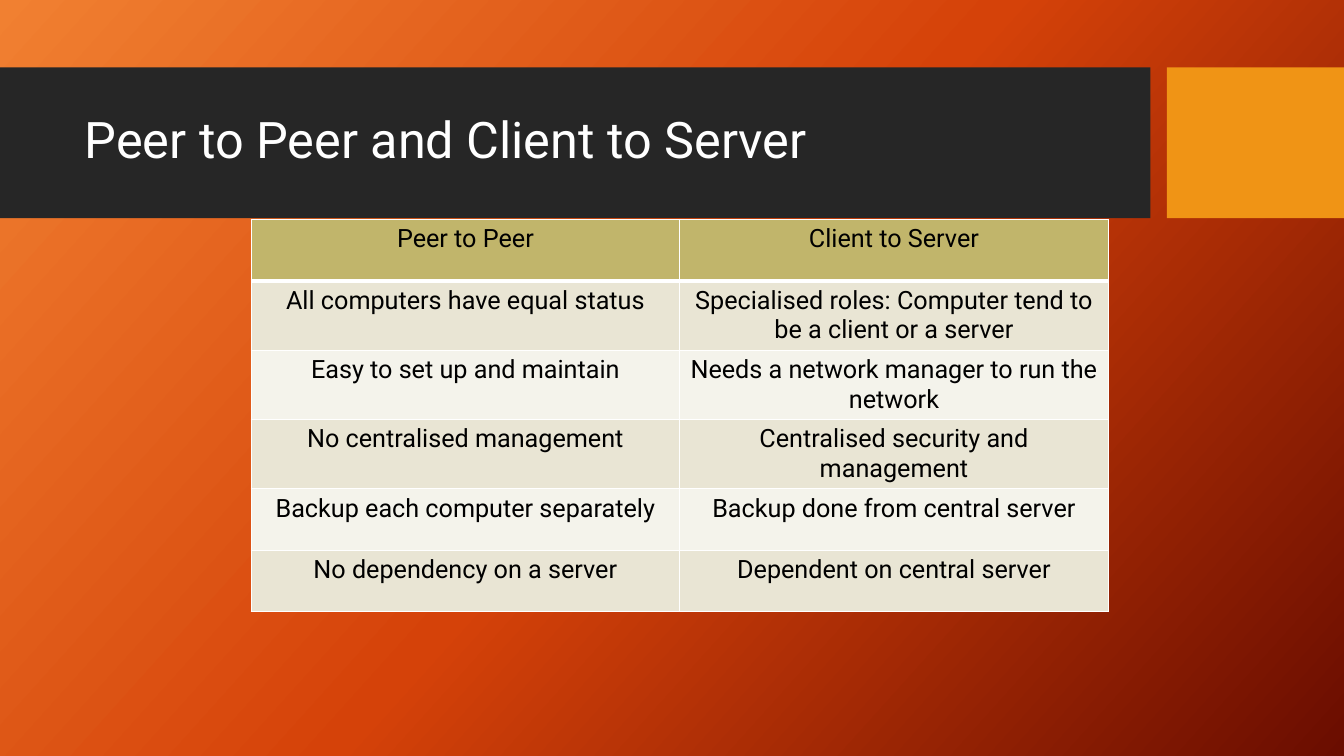
from copy import deepcopy
from dataclasses import dataclass

from lxml.etree import SubElement
from pptx import Presentation
from pptx.dml.color import RGBColor
from pptx.enum.shapes import MSO_SHAPE
from pptx.enum.text import MSO_ANCHOR, MSO_AUTO_SIZE, PP_ALIGN
from pptx.oxml.ns import qn
from pptx.util import Cm, Pt


@dataclass(frozen=True)
class Theme:
    font: str = "Roboto"
    title: int = 36
    body: int = 18
    white: str = "FFFFFF"
    black: str = "000000"
    band: str = "262626"
    accent: str = "F09415"
    head: str = "C1B56B"
    rows: tuple = ("E9E5D4", "F4F3EB")
    glow: tuple = ("F18031", "D54209", "6A0D00")
    angle: int = 42


def rgb(code):
    return RGBColor.from_string(code)


class Deck:
    def __init__(self, theme):
        self.theme = theme
        self.prs = Presentation()
        self.prs.slide_width, self.prs.slide_height = Cm(33.87), Cm(19.05)
        self.slide = self.prs.slides.add_slide(self.prs.slide_layouts[5])

    def backdrop(self):
        fill = self.slide.background.fill
        fill.gradient()
        fill.gradient_angle = 360 - self.theme.angle
        stops = self.slide.element.find(".//" + qn("a:gsLst"))
        stops.append(deepcopy(stops[-1]))
        colors = self.theme.glow
        for i, (stop, code) in enumerate(zip(fill.gradient_stops, colors)):
            stop.color.rgb = rgb(code)
            stop.position = i / (len(colors) - 1)

    def block(self, left, top, width, height, color):
        box = self.slide.shapes.add_shape(
            MSO_SHAPE.RECTANGLE, Cm(left), Cm(top), Cm(width), Cm(height))
        box.shadow.inherit = False
        box.fill.solid()
        box.fill.fore_color.rgb = rgb(color)
        box.line.fill.background()

    def style(self, para, size, color, align):
        para.alignment = align
        para.font.name = self.theme.font
        para.font.size = Pt(size)
        para.font.bold = False
        para.font.color.rgb = rgb(color)

    def title(self, text, left, top, width, height):
        shape = self.slide.shapes.title
        shape.left, shape.top = Cm(left), Cm(top)
        shape.width, shape.height = Cm(width), Cm(height)
        frame = shape.text_frame
        frame.text = text
        frame.word_wrap = True
        frame.auto_size = MSO_AUTO_SIZE.NONE
        frame.vertical_anchor = MSO_ANCHOR.MIDDLE
        para = frame.paragraphs[0]
        para.line_spacing = 0.9
        self.style(para, self.theme.title, self.theme.white, PP_ALIGN.LEFT)
        # Bring the title in front of its band
        self.slide.shapes.element.append(shape.element)

    def border(self, cell, base):
        props = cell._tc.get_or_add_tcPr()
        for i, (side, width) in enumerate(zip("LRTB", (1, 1, 1, base))):
            line = props.makeelement(qn(f"a:ln{side}"), {"w": str(Pt(width))})
            fill = SubElement(line, qn("a:solidFill"))
            SubElement(fill, qn("a:srgbClr"), val=self.theme.white)
            props.insert(i, line)

    def table(self, data, left, top, col, row):
        count, wide = len(data), len(data[0])
        grid = self.slide.shapes.add_table(
            count, wide, Cm(left), Cm(top), Cm(col * wide), Cm(row * count)).table
        for r, texts in enumerate(data):
            grid.rows[r].height = Cm(row)
            color = self.theme.rows[(r - 1) % 2] if r else self.theme.head
            for c, text in enumerate(texts):
                cell = grid.cell(r, c)
                cell.text = text
                cell.fill.solid()
                cell.fill.fore_color.rgb = rgb(color)
                self.border(cell, 1 if r else 3)
                self.style(cell.text_frame.paragraphs[0], self.theme.body,
                           self.theme.black, PP_ALIGN.CENTER)


ROWS = [
    ("Peer to Peer", "Client to Server"),
    ("All computers have equal status",
     "Specialised roles: Computer tend to be a client or a server"),
    ("Easy to set up and maintain",
     "Needs a network manager to run the network"),
    ("No centralised management", "Centralised security and management"),
    ("Backup each computer separately", "Backup done from central server"),
    ("No dependency on a server", "Dependent on central server"),
]


def main():
    theme = Theme()
    deck = Deck(theme)
    # Background and title band
    deck.backdrop()
    deck.block(0, 1.7, 28.99, 3.8, theme.band)
    deck.block(29.41, 1.7, 4.46, 3.8, theme.accent)
    deck.title("Peer to Peer and Client to Server", 1.88, 2.08, 26.7, 3)
    # Comparison table
    deck.table(ROWS, 6.33, 5.53, 10.8, 1.55)
    deck.prs.save("out.pptx")


if __name__ == "__main__":
    main()
